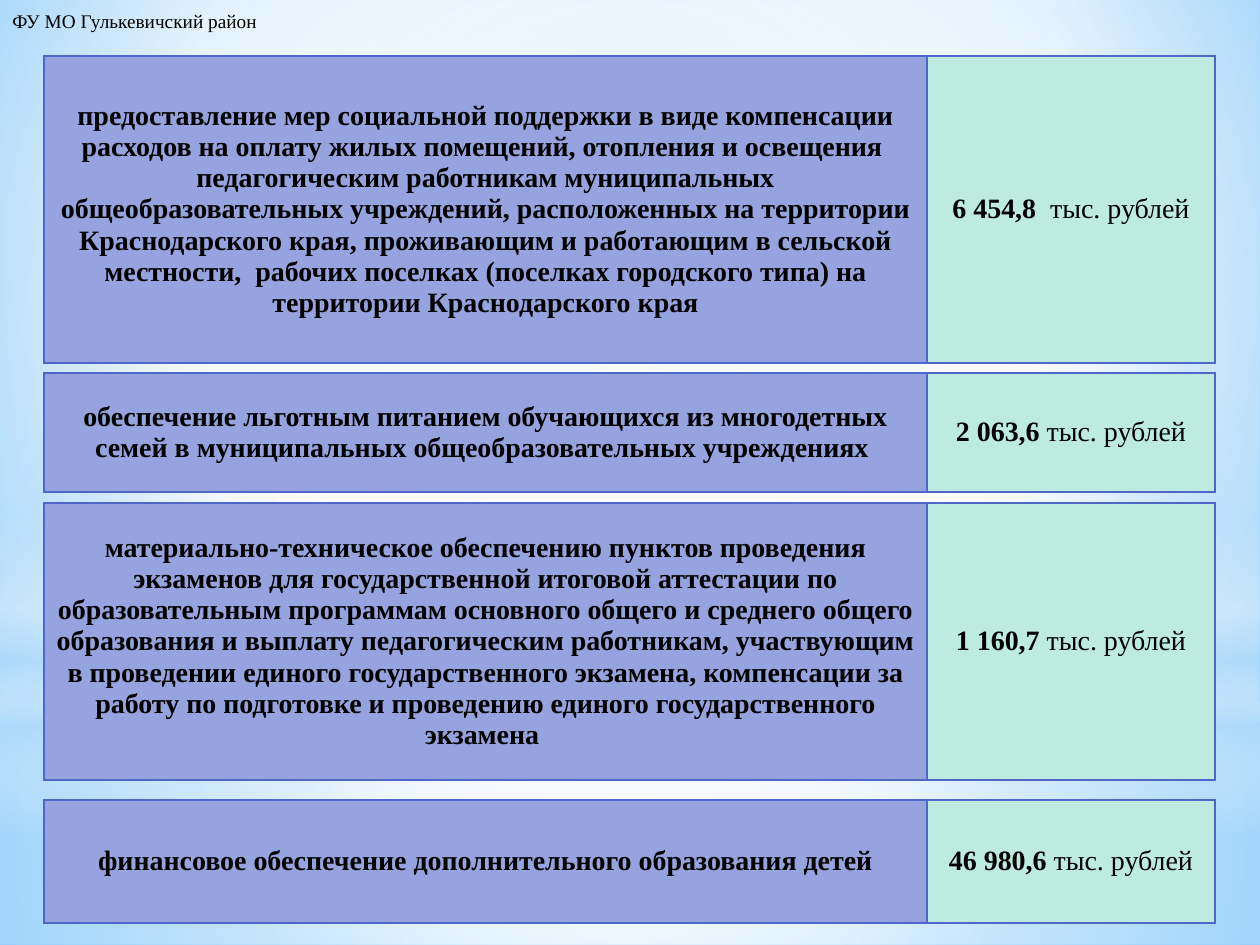
from lxml import etree
from pptx import Presentation
from pptx.dml.color import RGBColor
from pptx.enum.shapes import MSO_SHAPE as Shape
from pptx.enum.text import MSO_ANCHOR as Anchor, MSO_AUTO_SIZE as AutoSize, PP_ALIGN as Align
from pptx.oxml import parse_xml
from pptx.oxml.ns import nsdecls, qn
from pptx.util import Pt

PX = 914400 / 126
THEME = {
    "font": "Times New Roman",
    "label_size": 11,
    "table_size": 16,
    "text": RGBColor.from_string("000000"),
    "purpose": RGBColor.from_string("95A4DE"),
    "amount": RGBColor.from_string("BEEBDF"),
    "border": "4E67C8",
    "sky": "9ED5FF",
    "deep_sky": "5BB9FF",
    "mist": "B4DCFA",
    "white": "FFFFFF",
}
WHITE, MIST = THEME["white"], THEME["mist"]


def emu(*lengths):
    return [round(length * PX) for length in lengths]


def set_gradient(owner, stops, focus=None):
    """Swap the solid fill for a circular gradient, or a downward one without focus."""
    stop_xml = "".join(
        f'<a:gs pos="{position * 1000}"><a:srgbClr val="{color}">'
        f'<a:alpha val="{alpha * 1000}"/></a:srgbClr></a:gs>'
        for position, color, alpha in stops
    )
    if focus:
        sides = " ".join(f'{side}="{value * 1000}"' for side, value in zip("ltrb", focus))
        direction = f'<a:path path="circle"><a:fillToRect {sides}/></a:path>'
    else:
        direction = '<a:lin ang="5400000" scaled="0"/>'
    gradient = parse_xml(
        f'<a:gradFill {nsdecls("a")} rotWithShape="1"><a:gsLst>{stop_xml}</a:gsLst>'
        f"{direction}</a:gradFill>"
    )
    owner.replace(owner.find(qn("a:solidFill")), gradient)


presentation = Presentation()
presentation.slide_width, presentation.slide_height = emu(1260, 945)
slide = presentation.slides.add_slide(presentation.slide_layouts[6])

# Background
slide.background.fill.solid()
slide.background.fill.fore_color.rgb = RGBColor.from_string(WHITE)
set_gradient(
    slide.element.find(".//" + qn("p:bgPr")),
    [(0, THEME["sky"], 100), (60, WHITE, 100), (100, THEME["deep_sky"], 100)],
    (20, 10, 20, 60),
)

# Soft light layers: preset, top, height, stops (position, colour, opacity), focus
center = (50, 50, 50, 50)
layers = [
    (Shape.RECTANGLE, 703, 242, [(0, WHITE, 91), (37, WHITE, 76), (100, MIST, 79)], center),
    (Shape.RECTANGLE, 0, 703, [(0, WHITE, 89), (48, WHITE, 62), (100, MIST, 79)], center),
    (Shape.RECTANGLE, 519, 315, [(0, WHITE, 0), (29, WHITE, 30), (45, MIST, 40),
                                 (55, WHITE, 26), (65, MIST, 60), (100, WHITE, 0)], None),
    (Shape.OVAL, 220, 703, [(0, WHITE, 100), (56, WHITE, 0)], center),
]
for preset, top, height, stops, focus in layers:
    shape = slide.shapes.add_shape(preset, *emu(0, top, 1260, height))
    shape.shadow.inherit = False
    shape.line.fill.background()
    shape.fill.solid()
    shape.fill.fore_color.rgb = RGBColor.from_string(WHITE)
    set_gradient(shape.element.spPr, stops, focus)

# Department label
label = slide.shapes.add_textbox(*emu(0, 3, 275, 37))
label.text_frame.text = "ФУ МО Гулькевичский район"
label.text_frame.word_wrap = False
label.text_frame.auto_size = AutoSize.SHAPE_TO_FIT_TEXT
font = label.text_frame.paragraphs[0].runs[0].font
font.name, font.size = THEME["font"], Pt(THEME["label_size"])
font.color.rgb = THEME["text"]

# Spending tables: top, height, purpose, amount, unit
spending = [
    (56, 307, "предоставление мер социальной поддержки в виде компенсации расходов на оплату "
     "жилых помещений, отопления и освещения  педагогическим работникам муниципальных "
     "общеобразовательных учреждений, расположенных на территории Краснодарского края, "
     "проживающим и работающим в сельской местности,  рабочих поселках (поселках городского "
     "типа) на территории Краснодарского края", "6 454,8 ", " тыс. рублей"),
    (373, 119, "обеспечение льготным питанием обучающихся из многодетных семей в муниципальных "
     "общеобразовательных учреждениях ", "2 063,6", " тыс. рублей"),
    (503, 277, "материально-техническое обеспечению пунктов проведения экзаменов для "
     "государственной итоговой аттестации по образовательным программам основного общего и "
     "среднего общего образования и выплату педагогическим работникам, участвующим в "
     "проведении единого государственного экзамена, компенсации за работу по подготовке и "
     "проведению единого государственного экзамена ", "1 160,7 ", "тыс. рублей"),
    (800, 123, "финансовое обеспечение дополнительного образования детей",
     "46 980,6", " тыс. рублей"),
]
for top, height, purpose, amount, unit in spending:
    table = slide.shapes.add_table(1, 2, *emu(44, top, 1171, height)).table
    table.first_row = table.horz_banding = False
    table.columns[0].width, table.columns[1].width = emu(883, 288)
    contents = [(purpose, "", THEME["purpose"]), (amount, unit, THEME["amount"])]
    for cell, (bold_text, plain_text, color) in zip(table.rows[0].cells, contents):
        cell.vertical_anchor = Anchor.MIDDLE
        properties = cell._tc.get_or_add_tcPr()
        for side in ("lnL", "lnR", "lnT", "lnB"):
            border = etree.SubElement(properties, qn(f"a:{side}"), w=str(Pt(1)))
            fill = etree.SubElement(border, qn("a:solidFill"))
            etree.SubElement(fill, qn("a:srgbClr"), val=THEME["border"])
        cell.fill.solid()
        cell.fill.fore_color.rgb = color

        paragraph = cell.text_frame.paragraphs[0]
        paragraph.text = bold_text
        paragraph.alignment = Align.CENTER
        if plain_text:
            paragraph.add_run().text = plain_text
        for index, run in enumerate(paragraph.runs):
            run.font.name, run.font.size = THEME["font"], Pt(THEME["table_size"])
            run.font.bold = index == 0
            run.font.color.rgb = THEME["text"]

presentation.save("out.pptx")
